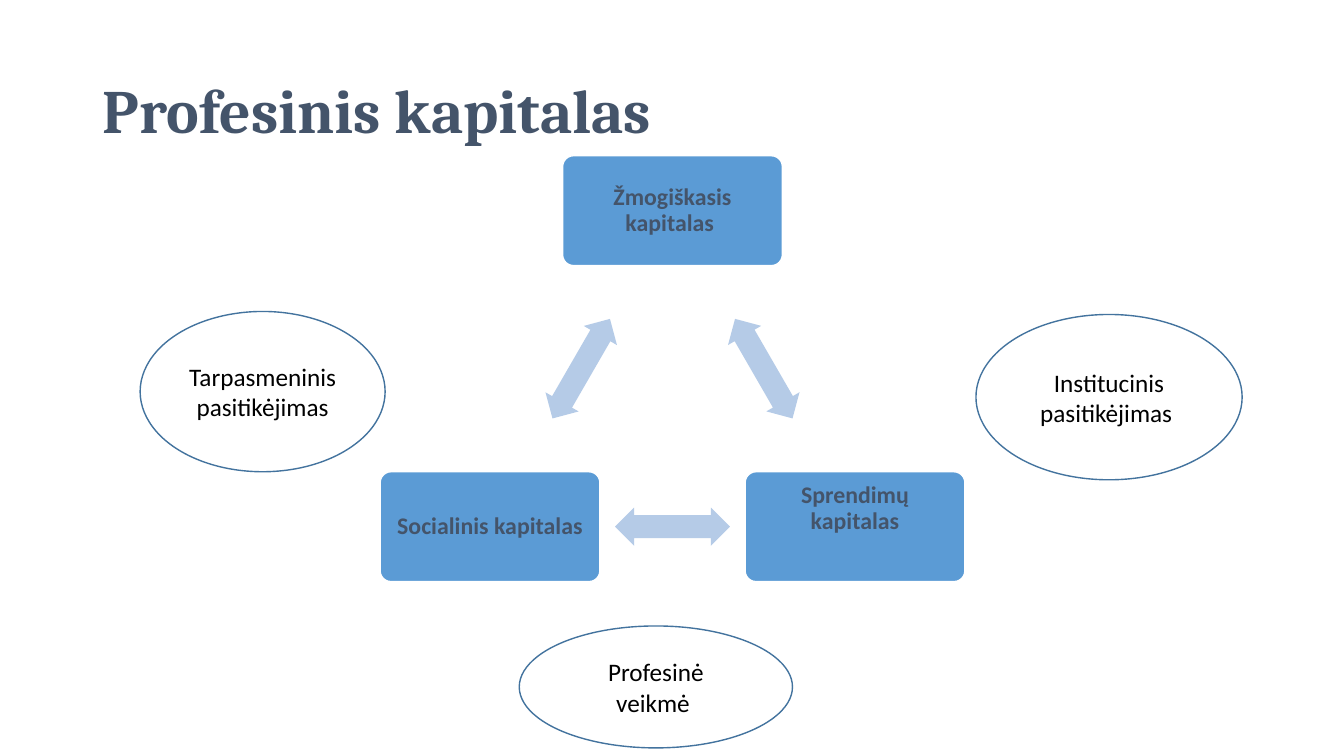
import dataclasses
import itertools
import math

import pptx
import pptx.dml.color
import pptx.enum.shapes
import pptx.enum.text
import pptx.shapes.autoshape
import pptx.slide
import pptx.util

Inches = pptx.util.Inches
RGBColor = pptx.dml.color.RGBColor
ShapeKind = pptx.enum.shapes.MSO_SHAPE

SLATE = RGBColor(0x44, 0x54, 0x6A)
BLUE = RGBColor(0x5B, 0x9B, 0xD5)
PALE_BLUE = RGBColor(0xB5, 0xCB, 0xE7)
OUTLINE = RGBColor(0x43, 0x73, 0x9E)
WHITE = RGBColor(0xFF, 0xFF, 0xFF)
BLACK = RGBColor(0, 0, 0)

TRIANGLE_X, TRIANGLE_Y, TRIANGLE_RADIUS = 6.67, 4.18, 2.09
CAPITAL_SIZE = (2.18, 1.09)
ARROW_SIZE = (1.14, 0.38)


@dataclasses.dataclass
class Capital:
    text: str
    angle: float
    bottom_margin: float = 0.1

    @property
    def center(self) -> tuple[float, float]:
        radians = math.radians(self.angle)
        return (TRIANGLE_X + TRIANGLE_RADIUS * math.cos(radians),
                TRIANGLE_Y + TRIANGLE_RADIUS * math.sin(radians))


@dataclasses.dataclass
class Factor:
    text: str
    left: float
    top: float
    width: float
    height: float


CAPITALS = [
    Capital("Žmogiškasis kapitalas ", -90),
    Capital("Sprendimų kapitalas", 30, bottom_margin=0.45),
    Capital("Socialinis kapitalas", 150),
]
FACTORS = [
    Factor("Tarpasmeninis pasitikėjimas", 1.39, 3.09, 2.43, 1.59),
    Factor("Institucinis\npasitikėjimas ", 9.68, 3.12, 2.64, 1.64),
    Factor("Profesinė veikmė ", 5.15, 6.21, 2.71, 1.21),
]


def write_text(shape: pptx.shapes.autoshape.Shape, text: str, size: float,
               color: RGBColor, font_name: str = "Calibri", bold: bool = False) -> None:
    frame = shape.text_frame
    frame.word_wrap = True
    frame.vertical_anchor = pptx.enum.text.MSO_ANCHOR.MIDDLE
    paragraph = frame.paragraphs[0]
    paragraph.text = text
    for run in paragraph.runs:
        run.font.name = font_name
        run.font.size = pptx.util.Pt(size)
        run.font.bold = bold
        run.font.color.rgb = color


def add_centered_shape(slide: pptx.slide.Slide, kind: ShapeKind, center: tuple[float, float],
                       size: tuple[float, float]) -> pptx.shapes.autoshape.Shape:
    left, top = (middle - length / 2 for middle, length in zip(center, size))
    shape = slide.shapes.add_shape(kind, Inches(left), Inches(top), *map(Inches, size))
    shape.shadow.inherit = False
    return shape


def set_outline(shape: pptx.shapes.autoshape.Shape, color: RGBColor) -> None:
    shape.line.color.rgb = color
    shape.line.width = pptx.util.Pt(1)


def add_title(slide: pptx.slide.Slide, text: str) -> None:
    title = slide.shapes.title
    title.left, title.top, title.width, title.height = map(Inches, (0.92, 0.4, 11.5, 1.45))
    write_text(title, text, 44, SLATE, "Cambria", bold=True)
    paragraph = title.text_frame.paragraphs[0]
    paragraph.alignment = pptx.enum.text.PP_ALIGN.LEFT
    paragraph.line_spacing = 0.9


def add_capital(slide: pptx.slide.Slide, capital: Capital) -> None:
    box = add_centered_shape(slide, ShapeKind.ROUNDED_RECTANGLE, capital.center, CAPITAL_SIZE)
    box.adjustments[0] = 0.1
    box.fill.solid()
    box.fill.fore_color.rgb = BLUE
    set_outline(box, WHITE)
    write_text(box, capital.text, 17, SLATE, bold=True)
    frame = box.text_frame
    frame.margin_left = frame.margin_right = frame.margin_top = Inches(0.1)
    frame.margin_bottom = Inches(capital.bottom_margin)
    frame.paragraphs[0].alignment = pptx.enum.text.PP_ALIGN.CENTER
    frame.paragraphs[0].line_spacing = 0.9


def add_arrow(slide: pptx.slide.Slide, start: Capital, end: Capital) -> None:
    """Place a double arrow midway between two capitals, turned along their line."""
    (start_x, start_y), (end_x, end_y) = start.center, end.center
    middle = ((start_x + end_x) / 2, (start_y + end_y) / 2)
    arrow = add_centered_shape(slide, ShapeKind.LEFT_RIGHT_ARROW, middle, ARROW_SIZE)
    arrow.adjustments[0], arrow.adjustments[1] = 0.6, 0.5
    arrow.rotation = round(math.degrees(math.atan2(end_y - start_y, end_x - start_x))) % 360
    arrow.fill.solid()
    arrow.fill.fore_color.rgb = PALE_BLUE
    arrow.line.fill.background()


def add_factor(slide: pptx.slide.Slide, factor: Factor) -> None:
    center = (factor.left + factor.width / 2, factor.top + factor.height / 2)
    ellipse = add_centered_shape(slide, ShapeKind.OVAL, center, (factor.width, factor.height))
    ellipse.fill.background()
    set_outline(ellipse, OUTLINE)
    write_text(ellipse, factor.text, 18, BLACK)
    ellipse.text_frame.paragraphs[0].alignment = pptx.enum.text.PP_ALIGN.CENTER


def main() -> None:
    presentation = pptx.Presentation()
    presentation.slide_width = Inches(13.33)
    presentation.slide_height = Inches(7.5)
    slide = presentation.slides.add_slide(presentation.slide_layouts[5])
    add_title(slide, "Profesinis kapitalas")
    for capital, following in itertools.pairwise(CAPITALS + CAPITALS[:1]):
        add_capital(slide, capital)
        add_arrow(slide, capital, following)
    for factor in FACTORS:
        add_factor(slide, factor)
    presentation.save("out.pptx")


if __name__ == "__main__":
    main()
